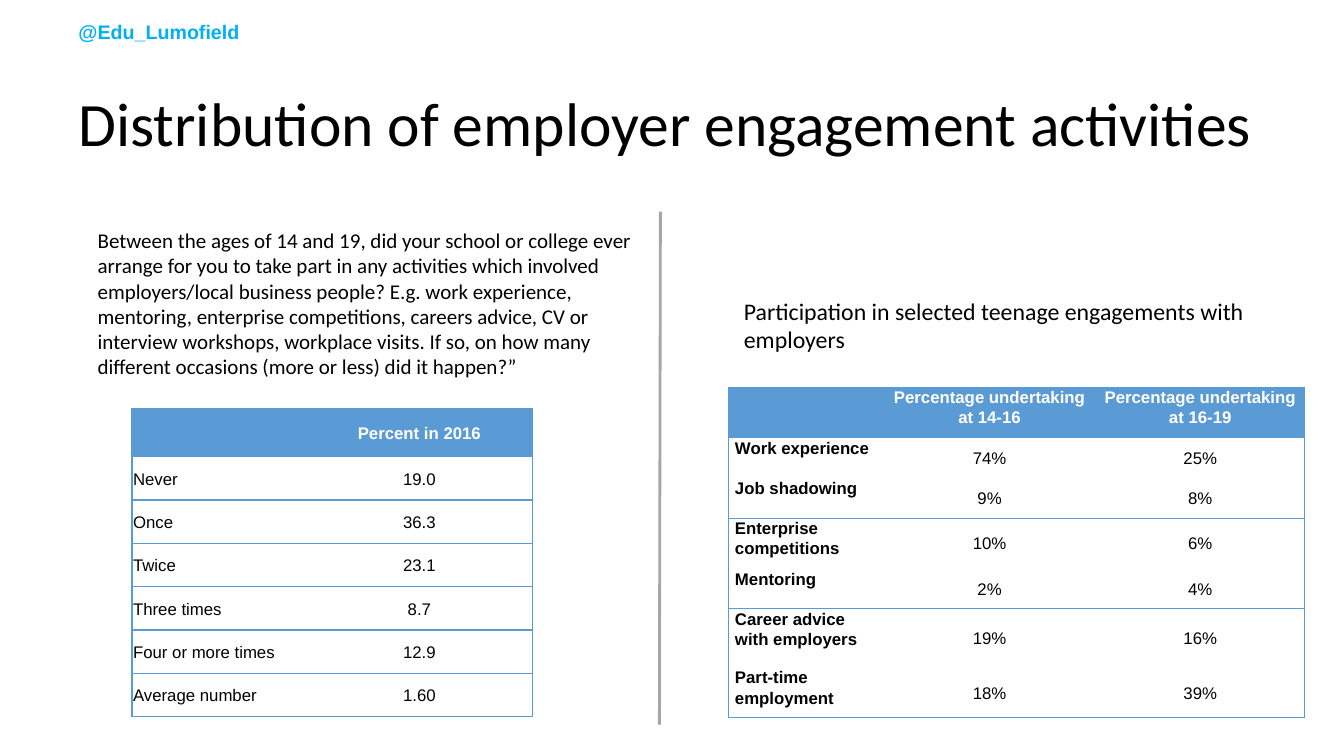
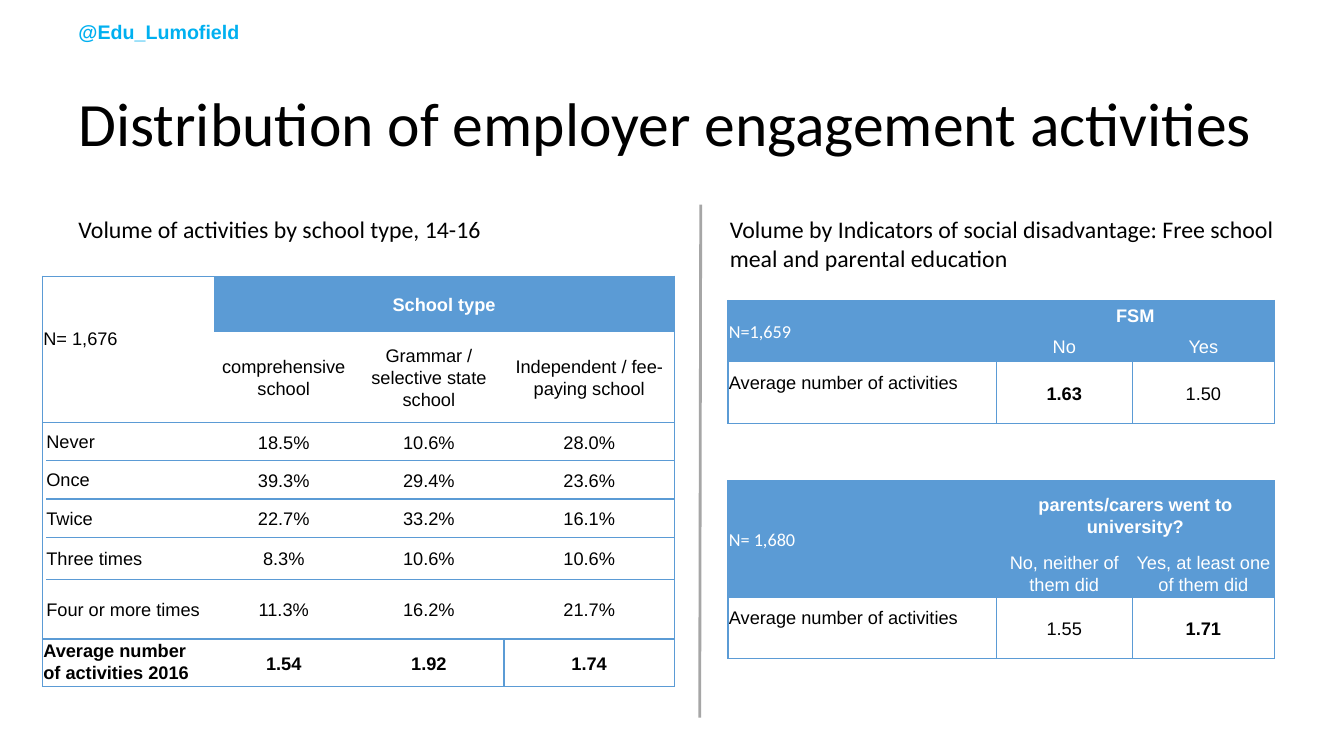
from lxml.etree import SubElement
from pptx import Presentation
from pptx.dml.color import RGBColor
from pptx.enum.shapes import MSO_CONNECTOR
from pptx.enum.text import MSO_ANCHOR, PP_ALIGN
from pptx.oxml.ns import qn
from pptx.util import Inches, Pt

STRAIGHT = MSO_CONNECTOR.STRAIGHT
TOP, MIDDLE = MSO_ANCHOR.TOP, MSO_ANCHOR.MIDDLE
LEFT, CENTER = PP_ALIGN.LEFT, PP_ALIGN.CENTER

BLUE, GREY, CYAN = "5B9BD5", "A6A6A6", "00B0F0"
BLACK, WHITE = "000000", "FFFFFF"
TITLE = "Distribution of employer engagement activities"
HANDLE = "@Edu_Lumofield"

# Cell looks: font, colour, fill, placing and insets (left, top, right, bottom)
BASE = {"name": "Arial", "bold": False, "color": BLACK, "fill": WHITE,
        "align": CENTER, "anchor": MIDDLE, "insets": (0.01, 0.01, 0.01, 0)}
HEAD = {**BASE, "color": WHITE, "fill": BLUE}
BOLD_HEAD = {**HEAD, "bold": True}
COUNT_HEAD = {**HEAD, "name": "Calibri", "align": LEFT}
LABEL = {**BASE, "align": LEFT}
TIGHT_LABEL = {**LABEL, "insets": (0, 0, 0, 0)}
STRONG = {**BASE, "bold": True}
RAISED_LABEL = {**LABEL, "insets": (0.01, 0.01, 0.01, 0.22)}
TOTAL_LABEL = {**LABEL, "bold": True, "anchor": TOP}
PADDED = {**BASE, "insets": (0.07, 0, 0.07, 0)}
PADDED_HEAD = {**BOLD_HEAD, "insets": (0.07, 0, 0.07, 0), "anchor": TOP}
PADDED_LABEL = {**PADDED, "align": LEFT, "anchor": TOP, "bold": True}


def rgb(value):
    return RGBColor.from_string(value)


def set_font(run, size, color, **values):
    run.font.size = Pt(size)
    run.font.color.rgb = rgb(color)
    for attribute, value in values.items():
        setattr(run.font, attribute, value)


def set_insets(target, insets):
    for side, inset in zip(("left", "top", "right", "bottom"), insets):
        setattr(target, f"margin_{side}", Inches(inset))


def add_text(slide, box, text, size, color=BLACK, name="Calibri", bold=False,
             anchor=TOP, wrap=True, insets=(0.1, 0.1, 0.1, 0.1)):
    frame = slide.shapes.add_textbox(*map(Inches, box)).text_frame
    frame.word_wrap = wrap
    frame.vertical_anchor = anchor
    set_insets(frame, insets)
    run = frame.paragraphs[0].add_run()
    run.text = text
    set_font(run, size, color, name=name, bold=bold)


def add_divider(slide, left, top, height):
    """Slightly slanted rule between the two halves of a slide."""
    line = slide.shapes.add_connector(
        STRAIGHT, Inches(left), Inches(top),
        Inches(left - 0.01), Inches(top + height))
    line.line.color.rgb = rgb(GREY)
    line.line.width = Pt(2)
    SubElement(line._element.spPr, qn("a:effectLst"))


def set_borders(cell, sides, width):
    properties = cell._tc.get_or_add_tcPr()
    for tag, visible in sides.items():
        line = SubElement(properties, qn(f"a:{tag}"), w=str(Pt(width)))
        if visible:
            fill = SubElement(line, qn("a:solidFill"))
            SubElement(fill, qn("a:srgbClr"), val=BLUE)
        else:
            SubElement(line, qn("a:noFill"))


def fill_cell(cell, text, look, size):
    cell.fill.solid()
    cell.fill.fore_color.rgb = rgb(look["fill"])
    cell.vertical_anchor = look["anchor"]
    set_insets(cell, look["insets"])
    paragraph = cell.text_frame.paragraphs[0]
    paragraph.alignment = look["align"]
    paragraph.line_spacing = 1.07
    if text:
        run = paragraph.add_run()
        run.text = text
        set_font(run, size, look["color"], name=look["name"], bold=look["bold"])
    # The paragraph end also counts towards the row height
    SubElement(paragraph._p, qn("a:endParaRPr"), sz=str(size * 100))


def add_grid(slide, left, top, widths, heights, rows, size,
             rules, uprights=(), merges=(), border=1):
    """Framed table: rules are rows underlined, uprights are cells with a
    left border, merges are (top, left, bottom, right) cell ranges."""
    box = map(Inches, (left, top, sum(widths), sum(heights)))
    table = slide.shapes.add_table(len(rows), len(widths), *box).table
    table.first_row = table.horz_banding = False
    for column, width in zip(table.columns, widths):
        column.width = Inches(width)
    for row, height in zip(table.rows, heights):
        row.height = Inches(height)

    for r, row in enumerate(rows):
        for c, (text, look) in enumerate(row):
            area = next((m for m in merges
                         if m[0] <= r <= m[2] and m[1] <= c <= m[3]),
                        (r, c, r, c))
            first_row, first_column, last_row, last_column = area
            origin = (r, c) == (first_row, first_column)
            at_right = origin or c == last_column
            at_bottom = origin or r == last_row
            sides = {
                "lnL": c == first_column and (c == 0 or (r, c) in uprights),
                "lnR": at_right and (last_column == len(widths) - 1
                                     or (r, last_column + 1) in uprights),
                "lnT": r == first_row and (r == 0 or r - 1 in rules),
                "lnB": at_bottom and (last_row == len(rows) - 1
                                      or last_row in rules),
            }
            set_borders(table.cell(r, c), sides, border)
            fill_cell(table.cell(r, c), text, look, size)
    for first_row, first_column, last_row, last_column in merges:
        table.cell(first_row, first_column).merge(
            table.cell(last_row, last_column))


def add_base_slide(presentation):
    slide = presentation.slides.add_slide(presentation.slide_layouts[6])
    add_text(slide, (0.68, 0.48, 12.21, 1.45), TITLE, 44, anchor=MIDDLE)
    add_text(slide, (0.68, 0.15, 1.82, 0.34), HANDLE, 14, CYAN, "Arial", True,
             wrap=False, insets=(0.1, 0.05, 0.1, 0.05))
    return slide


def add_occasions_table(slide, left, top):
    values = [("Never", "19.0"), ("Once", "36.3"), ("Twice", "23.1"),
              ("Three times", "8.7"), ("Four or more times", "12.9"),
              ("Average number", "1.60")]
    rows = [[("", HEAD), ("Percent in 2016", BOLD_HEAD)]]
    rows += [[(label, LABEL), (value, BASE)] for label, value in values]
    add_grid(slide, left, top, [1.73, 2.24], [0.48] + [0.43] * 6, rows, 12,
             rules=range(6))


def add_participation_table(slide, left, top):
    values = [("Work experience", "74%", "25%"),
              ("Job shadowing", "9%", "8%"),
              ("Enterprise competitions", "10%", "6%"),
              ("Mentoring", "2%", "4%"),
              ("Career advice with employers", "19%", "16%"),
              ("Part-time employment", "18%", "39%")]
    rows = [[("", PADDED_HEAD)] + [
        (f"Percentage undertaking at {ages}", PADDED_HEAD)
        for ages in ("14-16", "16-19")]]
    rows += [[(label, PADDED_LABEL)] + [(share, PADDED) for share in shares]
             for label, *shares in values]
    add_grid(slide, left, top, [1.54, 2.11, 2.07],
             [0.5, 0.4, 0.4, 0.5, 0.4, 0.58, 0.5], rows, 12,
             rules=(0, 2, 4), border=0.75)


def add_school_table(slide, left, top):
    values = [("Never", "18.5%", "10.6%", "28.0%"),
              ("Once", "39.3%", "29.4%", "23.6%"),
              ("Twice", "22.7%", "33.2%", "16.1%"),
              ("Three times", "8.3%", "10.6%", "10.6%"),
              ("Four or more times", "11.3%", "16.2%", "21.7%")]
    schools = ("comprehensive school", "Grammar / selective state school",
               "Independent / fee-paying school")
    blank = ("", TIGHT_LABEL)
    rows = [[("N= 1,676", RAISED_LABEL), blank, blank,
             ("School type", BOLD_HEAD), ("", HEAD), ("", HEAD)],
            [blank] * 3 + [(school, BASE) for school in schools]]
    rows += [[blank, (label, TIGHT_LABEL), blank]
             + [(share, BASE) for share in shares]
             for label, *shares in values]
    rows.append([("Average number of activities 2016", TOTAL_LABEL),
                 blank, blank]
                + [(mean, STRONG) for mean in ("1.54", "1.92", "1.74")])
    add_grid(slide, left, top, [0.04, 1.6, 0.05, 1.39, 1.49, 1.69],
             [0.55, 0.9, 0.38, 0.38, 0.38, 0.42, 0.59, 0.43], rows, 13,
             rules=range(1, 7), uprights=[(7, 5)],
             merges=[(0, 0, 1, 2), (0, 3, 0, 5), (2, 0, 6, 0), (7, 0, 7, 1)])


def add_indicator_table(slide, left, top, heights, count, question, answers,
                        means):
    """Two-answer comparison; the higher mean is bold."""
    rows = [[(count, COUNT_HEAD), (question, BOLD_HEAD), ("", HEAD)],
            [("", HEAD)] + [(answer, HEAD) for answer in answers],
            [("Average number of activities", RAISED_LABEL)]
            + [(f"{mean:.2f}", STRONG if mean == max(means) else BASE)
               for mean in means]]
    add_grid(slide, left, top, [2.66, 1.35, 1.41], heights, rows, 13,
             rules=[1], uprights=[(2, 1), (2, 2)],
             merges=[(0, 0, 1, 0), (0, 1, 0, 2)])


def add_participation_slide(presentation):
    slide = add_base_slide(presentation)
    add_text(slide, (0.87, 2.16, 5.81, 1.84),
             "Between the ages of 14 and 19, did your school or college ever "
             "arrange for you to take part in any activities which involved "
             "employers/local business people? E.g. work experience, "
             "mentoring, enterprise competitions, careers advice, CV or "
             "interview workshops, workplace visits. If so, on how many "
             "different occasions (more or less) did it happen?”", 15)
    add_text(slide, (7.28, 2.84, 5.67, 0.83),
             "Participation in selected teenage engagements with employers", 17)
    add_occasions_table(slide, 1.31, 4.05)
    add_participation_table(slide, 7.22, 3.84)
    add_divider(slide, 6.55, 2.1, 5.09)


def add_volume_slide(presentation):
    slide = add_base_slide(presentation)
    add_text(slide, (0.68, 2.03, 5.67, 0.83),
             "Volume of activities by school type, 14-16", 17)
    add_text(slide, (7.14, 2.03, 5.95, 0.83),
             "Volume by Indicators of social disadvantage: Free school meal "
             "and parental education", 17)
    add_divider(slide, 6.95, 2.03, 5.09)
    add_school_table(slide, 0.42, 2.74)
    add_indicator_table(slide, 7.22, 2.98, [0.3, 0.31, 0.61], "N=1,659",
                        "FSM", ("No", "Yes"), (1.63, 1.50))
    add_indicator_table(slide, 7.22, 4.77, [0.68, 0.44, 0.61], "N= 1,680",
                        "parents/carers went to university?",
                        ("No, neither of them did",
                         "Yes, at least one of them did"), (1.55, 1.71))


def main():
    presentation = Presentation()
    presentation.slide_width = Inches(13.33)
    presentation.slide_height = Inches(7.5)
    add_participation_slide(presentation)
    add_volume_slide(presentation)
    presentation.save("out.pptx")


if __name__ == "__main__":
    main()
